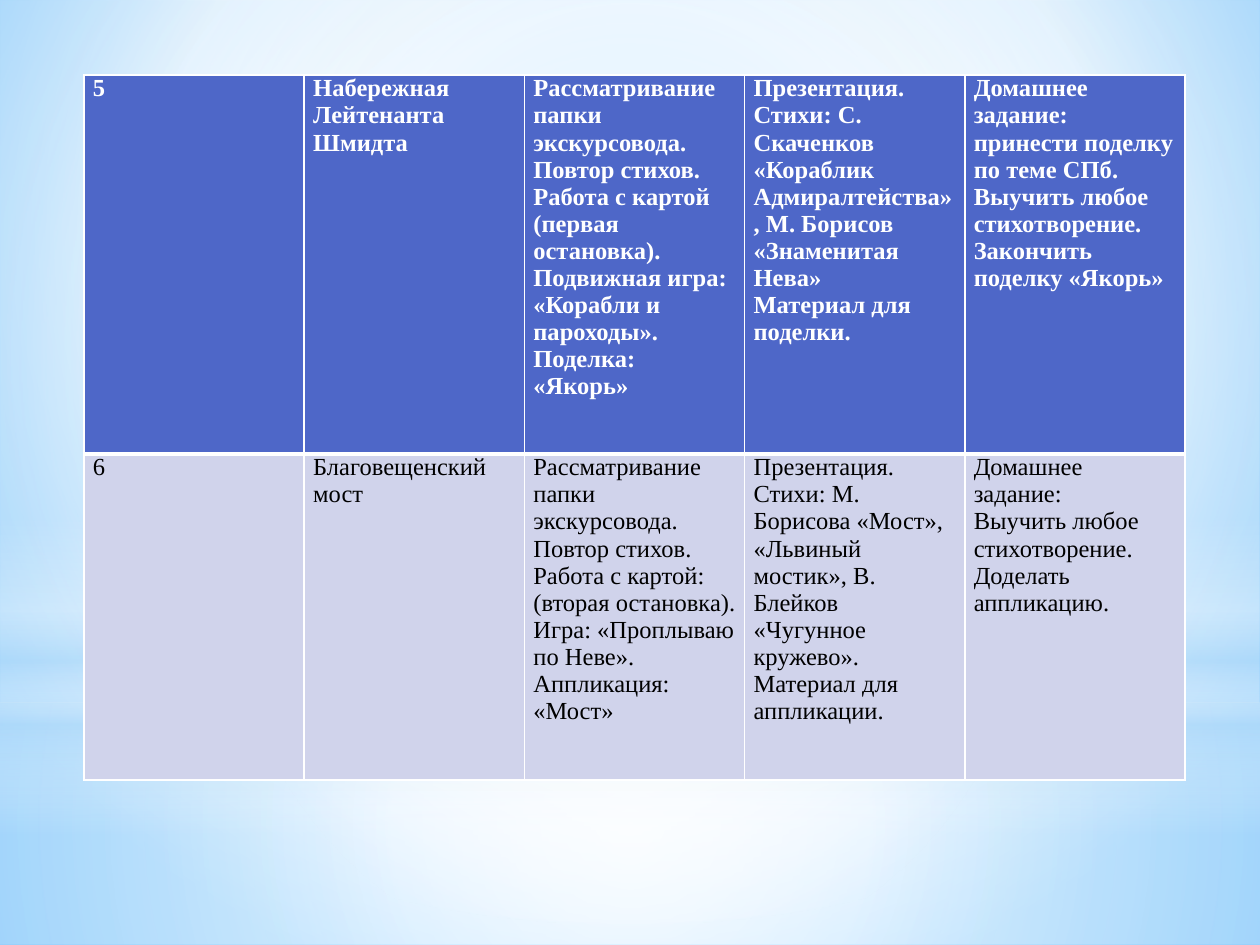
import pptx
import pptx.util
import pptx.oxml
import pptx.oxml.ns
import pptx.dml.color
import pptx.enum.shapes

SCALE = 914400 / 126
WIDE, HIGH = 1260, 945
COLORS = {
    "white": "FFFFFF", "black": "000000", "pale": "B4DCFA",
    "sky": "9ED5FF", "deep": "5BB9FF",
    "head": "4E67C8", "body": "D0D3EB",
}
NS = pptx.oxml.ns.nsdecls("a")
BOX = pptx.enum.shapes.MSO_SHAPE.RECTANGLE
OVAL = pptx.enum.shapes.MSO_SHAPE.OVAL
MID = (50, 50, 50, 50)

GLOWS = [
    (BOX, 703, 242, [(0, "white", 91), (37, "white", 76), (100, "pale", 79)], MID),
    (BOX, 0, 703, [(0, "white", 89), (48, "white", 62), (100, "pale", 79)], MID),
    (BOX, 519, 315, [(0, "white", 0), (29, "white", 30), (45, "pale", 40),
                     (55, "white", 26), (65, "pale", 60), (100, "white", 0)], None),
    (OVAL, 220, 703, [(0, "white", 100), (56, "white", 0)], MID),
]

ROWS = [
    [
        ["5"],
        ["Набережная Лейтенанта Шмидта"],
        ["Рассматривание папки экскурсовода.", "Повтор стихов.",
         "Работа с картой (первая остановка).",
         "Подвижная игра: «Корабли и пароходы».", "Поделка: «Якорь»"],
        ["Презентация.",
         "Стихи: С. Скаченков «Кораблик Адмиралтейства», М. Борисов «Знаменитая Нева»",
         "Материал для поделки."],
        ["Домашнее задание: принести поделку по теме СПб.", "Выучить любое",
         "стихотворение.", "Закончить поделку «Якорь»"],
    ],
    [
        ["6"],
        ["Благовещенский мост"],
        ["Рассматривание папки экскурсовода.", "Повтор стихов.",
         "Работа с картой: (вторая остановка).", "Игра: «Проплываю по Неве».",
         "Аппликация: «Мост»"],
        ["Презентация.", "Стихи: М. Борисова «Мост»,",
         "«Львиный мостик», В. Блейков «Чугунное кружево».",
         "Материал для аппликации."],
        ["Домашнее задание:", "Выучить любое", "стихотворение.",
         "Доделать аппликацию."],
    ],
]


def px(n):
    return pptx.util.Emu(round(n * SCALE))


def rgb(name):
    return pptx.dml.color.RGBColor.from_string(COLORS[name])


def blend(root, stops, focus):
    marks = "".join(
        f'<a:gs pos="{pos * 1000}"><a:srgbClr val="{COLORS[name]}">'
        f'<a:alpha val="{alpha * 1000}"/></a:srgbClr></a:gs>'
        for pos, name, alpha in stops)
    if focus:
        sides = " ".join(f'{s}="{v * 1000}"' for s, v in zip("ltrb", focus))
        way = f'<a:path path="circle"><a:fillToRect {sides}/></a:path>'
    else:
        way = '<a:lin ang="5400000" scaled="0"/>'
    grad = pptx.oxml.parse_xml(
        f'<a:gradFill {NS} rotWithShape="1"><a:gsLst>{marks}</a:gsLst>{way}</a:gradFill>')
    flat = root.find(".//" + pptx.oxml.ns.qn("a:solidFill"))
    flat.getparent().replace(flat, grad)


def back(slide):
    slide.background.fill.solid()
    slide.background.fill.fore_color.rgb = rgb("white")
    stops = [(0, "sky", 100), (60, "white", 100), (100, "deep", 100)]
    blend(slide.element, stops, (20, 10, 20, 60))


def glow(slide, kind, top, high, stops, focus):
    shape = slide.shapes.add_shape(kind, 0, px(top), px(WIDE), px(high))
    shape.shadow.inherit = False
    shape.line.fill.background()
    shape.fill.solid()
    shape.fill.fore_color.rgb = rgb("white")
    blend(shape.element, stops, focus)


def edge(cell, sizes):
    props = cell.fill._xPr
    for i, (side, size) in enumerate(zip("LRTB", sizes)):
        props.insert(i, pptx.oxml.parse_xml(
            f'<a:ln{side} {NS} w="{pptx.util.Pt(size)}"><a:solidFill>'
            f'<a:srgbClr val="{COLORS["white"]}"/></a:solidFill></a:ln{side}>'))


def write(cell, lines, color, bold):
    frame = cell.text_frame
    for i, line in enumerate(lines):
        para = frame.add_paragraph() if i else frame.paragraphs[0]
        run = para.add_run()
        run.text = line
        run.font.name = "Times New Roman"
        run.font.size = pptx.util.Pt(14)
        run.font.bold = bold
        run.font.color.rgb = rgb(color)


def plan(slide):
    highs = [379, 326]
    cols = len(ROWS[0])
    table = slide.shapes.add_table(
        len(ROWS), cols, px(84), px(75), px(220 * cols), px(sum(highs))).table
    for col in table.columns:
        col.width = px(220.25)
    for r, row in enumerate(ROWS):
        head = r == 0
        table.rows[r].height = px(highs[r])
        for c, lines in enumerate(row):
            cell = table.cell(r, c)
            cell.margin_left = cell.margin_right = px(9)
            cell.margin_top = cell.margin_bottom = 0
            cell.fill.solid()
            cell.fill.fore_color.rgb = rgb("head" if head else "body")
            edge(cell, (1, 1, 1, 3) if head else (1, 1, 3, 1))
            write(cell, lines, "white" if head else "black", head)


def main():
    deck = pptx.Presentation()
    deck.slide_width, deck.slide_height = px(WIDE), px(HIGH)
    slide = deck.slides.add_slide(deck.slide_layouts[6])
    back(slide)
    for item in GLOWS:
        glow(slide, *item)
    plan(slide)
    deck.save("out.pptx")


if __name__ == "__main__":
    main()
